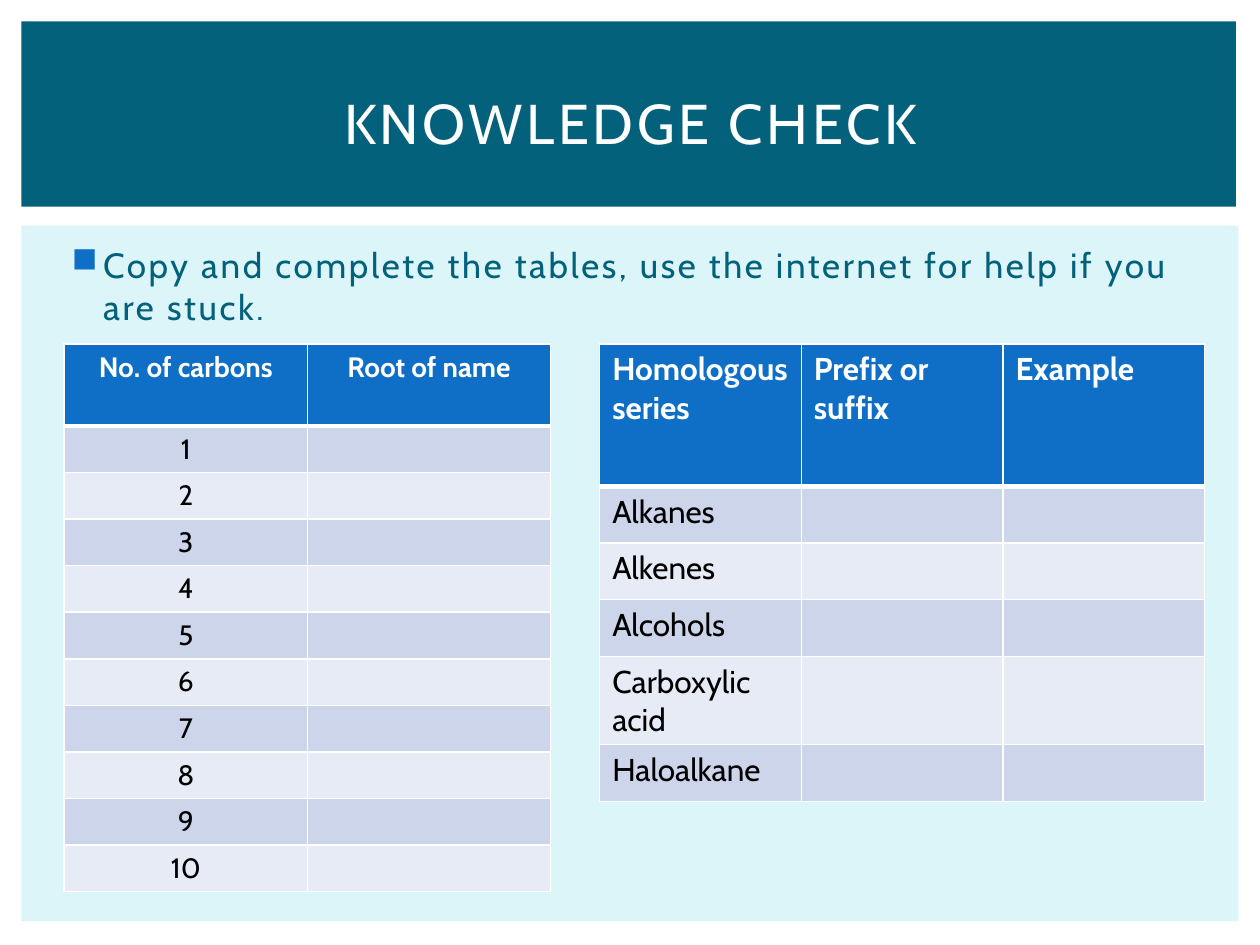
from dataclasses import dataclass

from lxml.etree import SubElement
from pptx import Presentation
from pptx.dml.color import RGBColor
from pptx.enum.shapes import MSO_SHAPE
from pptx.enum.text import MSO_ANCHOR, PP_ALIGN
from pptx.oxml.ns import qn
from pptx.util import Inches, Pt

FONT = "Cabin"
WHITE, BLACK = "FFFFFF", "000000"
TEAL, PALE_TEAL, BLUE = "04617B", "DBF5F9", "0F6FC6"
BANDS = ("CCD5EA", "E7EBF5")


@dataclass
class Panel:
    left: float
    top: float
    width: float
    height: float
    color: str


@dataclass
class Worksheet:
    left: float
    top: float
    column_width: float
    header_height: float
    row_height: float
    headings: list[str]
    entries: list[str]
    size: int
    align: PP_ALIGN


def rgb(color: str) -> RGBColor:
    return RGBColor.from_string(color)


def write(frame, text: str, *, size: int, color: str, bold: bool = False,
          align: PP_ALIGN = PP_ALIGN.LEFT, spacing: float = 0):
    """Put one formatted paragraph in a text frame and return it."""
    paragraph = frame.paragraphs[0]
    paragraph.alignment = align
    if not text:
        # An empty cell still needs its size, which sets the row height
        SubElement(paragraph._p, qn("a:endParaRPr"), sz=str(size * 100))
        return paragraph
    run = paragraph.add_run()
    run.text = text
    run.font.name = FONT
    run.font.size = Pt(size)
    run.font.bold = bold
    run.font.color.rgb = rgb(color)
    if spacing:
        run.font._element.set("spc", str(int(spacing * 100)))
    return paragraph


def draw_panel(slide, panel: Panel) -> None:
    shape = slide.shapes.add_shape(
        MSO_SHAPE.RECTANGLE, Inches(panel.left), Inches(panel.top),
        Inches(panel.width), Inches(panel.height))
    shape.shadow.inherit = False
    shape.fill.solid()
    shape.fill.fore_color.rgb = rgb(panel.color)
    shape.line.fill.background()


def set_borders(cell, top: float = 1, bottom: float = 1) -> None:
    properties = cell._tc.get_or_add_tcPr()
    for side, width in (("L", 1), ("R", 1), ("T", top), ("B", bottom)):
        line = SubElement(properties, qn(f"a:ln{side}"), w=str(Pt(width)))
        fill = SubElement(line, qn("a:solidFill"))
        SubElement(fill, qn("a:srgbClr"), val=WHITE)


def draw_worksheet(slide, sheet: Worksheet) -> None:
    columns = len(sheet.headings)
    blanks = [""] * (columns - 1)
    rows = [sheet.headings] + [[entry, *blanks] for entry in sheet.entries]
    height = sheet.header_height + sheet.row_height * len(sheet.entries)
    table = slide.shapes.add_table(
        len(rows), columns, Inches(sheet.left), Inches(sheet.top),
        Inches(sheet.column_width * columns), Inches(height)).table
    for column in table.columns:
        column.width = Inches(sheet.column_width)
    for r, texts in enumerate(rows):
        header = r == 0
        table.rows[r].height = Inches(
            sheet.header_height if header else sheet.row_height)
        for c, text in enumerate(texts):
            cell = table.cell(r, c)
            set_borders(cell, top=3 if r == 1 else 1, bottom=3 if header else 1)
            cell.fill.solid()
            cell.fill.fore_color.rgb = rgb(BLUE if header else BANDS[(r - 1) % 2])
            write(cell.text_frame, text, size=sheet.size, bold=header,
                  color=WHITE if header else BLACK, align=sheet.align)


def draw_title(slide, text: str) -> None:
    title = slide.shapes.title
    title.left, title.top = Inches(0.42), Inches(0.39)
    title.width, title.height = Inches(9.17), Inches(1.15)
    title.text_frame.vertical_anchor = MSO_ANCHOR.MIDDLE
    write(title.text_frame, text, size=32, color=WHITE,
          align=PP_ALIGN.CENTER, spacing=2)
    # Bring the title in front of the panels
    slide.shapes.element.append(title.element)


def draw_instruction(slide, text: str) -> None:
    box = slide.shapes.add_textbox(
        Inches(0.42), Inches(1.88), Inches(9.19), Inches(0.85))
    box.text_frame.word_wrap = True
    paragraph = write(box.text_frame, text, size=20, color=TEAL, spacing=1.5)
    paragraph.space_before = Pt(4)
    # Square bullet with a hanging indent
    properties = paragraph._p.get_or_add_pPr()
    properties.set("marL", str(Inches(0.3)))
    properties.set("indent", str(Inches(-0.25)))
    bullet_color = SubElement(properties, qn("a:buClr"))
    SubElement(bullet_color, qn("a:srgbClr"), val=BLUE)
    SubElement(properties, qn("a:buChar"), char="■")


PANELS = [
    Panel(0.17, 1.79, 9.66, 5.52, PALE_TEAL),
    Panel(0.17, 0.17, 9.64, 1.47, TEAL),
]

WORKSHEETS = [
    Worksheet(0.51, 2.73, 1.93, 0.65, 0.37,
              ["No. of carbons", "Root of name"],
              [str(n) for n in range(1, 11)], 16, PP_ALIGN.CENTER),
    Worksheet(4.76, 2.73, 1.6, 1.13, 0.45,
              ["Homologous series", "Prefix or suffix", "Example"],
              ["Alkanes", "Alkenes", "Alcohols", "Carboxylic acid", "Haloalkane"],
              18, PP_ALIGN.LEFT),
]


def main() -> None:
    presentation = Presentation()
    presentation.slide_width, presentation.slide_height = Inches(10), Inches(7.5)
    slide = presentation.slides.add_slide(presentation.slide_layouts[5])

    # Background panels
    for panel in PANELS:
        draw_panel(slide, panel)

    # Title and task
    draw_title(slide, "KNOWLEDGE CHECK")
    draw_instruction(slide, "Copy and complete the tables, use the internet "
                            "for help if you are stuck.")

    # Tables to complete
    for sheet in WORKSHEETS:
        draw_worksheet(slide, sheet)

    presentation.save("out.pptx")


if __name__ == "__main__":
    main()
